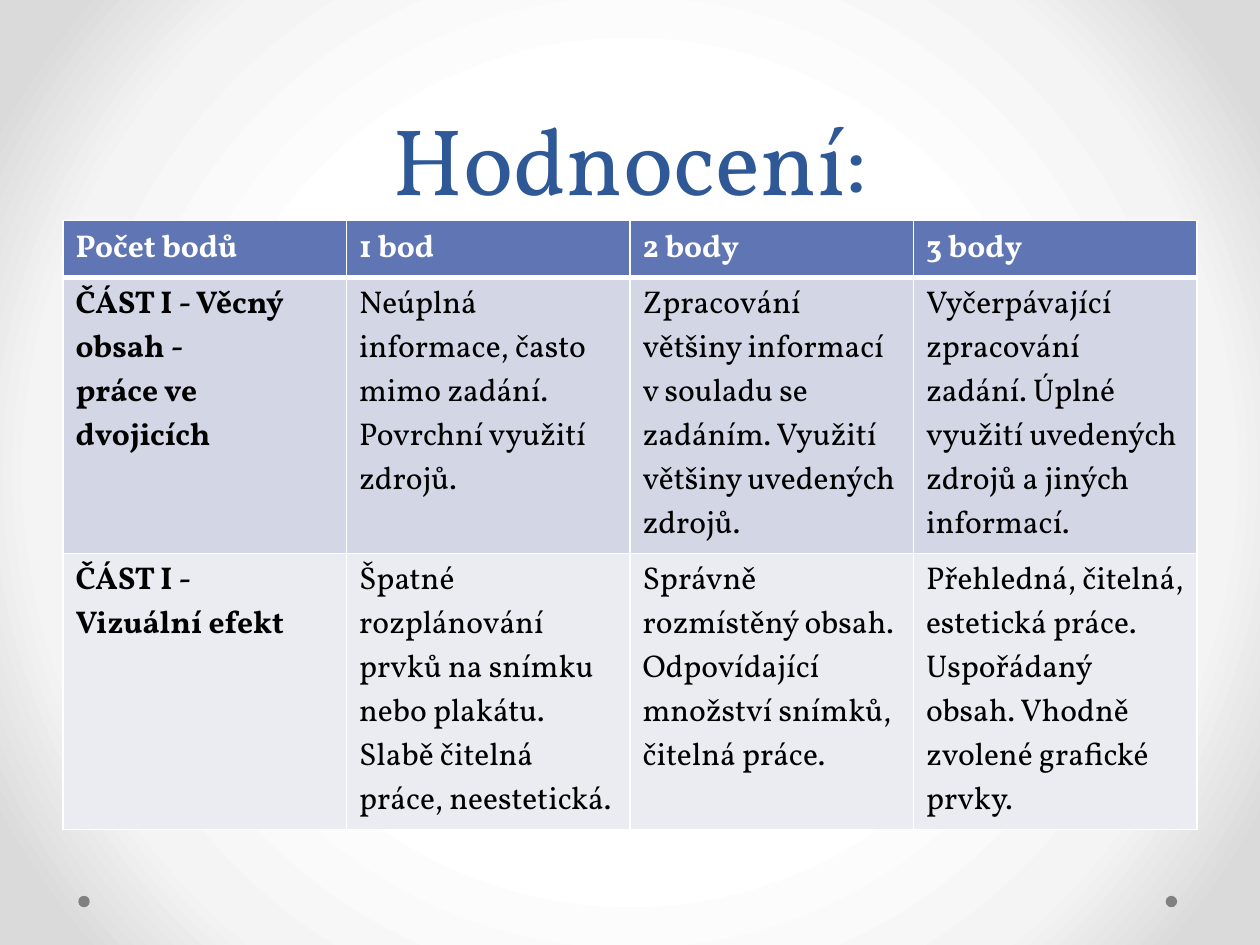
from lxml import etree
from pptx import Presentation
from pptx import util as u
from pptx.dml.color import RGBColor
from pptx.enum import shapes, text
from pptx.oxml.ns import qn

ROWS = [
    ["Počet bodů", "1 bod", "2 body", "3 body"],
    ["ČÁST I - Věcný obsah -\npráce ve dvojicích",
     "Neúplná informace, často mimo zadání. Povrchní využití zdrojů.",
     "Zpracování většiny informací v souladu se zadáním. "
     "Využití většiny uvedených zdrojů.",
     "Vyčerpávající zpracování zadání. "
     "Úplné využití uvedených zdrojů a jiných informací."],
    ["ČÁST I -\nVizuální efekt",
     "Špatné rozplánování prvků na snímku nebo plakátu. "
     "Slabě čitelná práce, neestetická.",
     "Správně rozmístěný obsah. Odpovídající množství snímků, čitelná práce.",
     "Přehledná, čitelná, estetická práce. Uspořádaný obsah. "
     "Vhodně zvolené grafické prvky."],
]
ROW_FILLS = ["6076B4", "D2D6E5", "EAECF2"]


def rgb(value):
    return RGBColor.from_string(value)


def add_xml(parent, tag, **attrs):
    return etree.SubElement(parent, qn(tag), attrs)


class Deck:
    font = "Vollkorn"
    title_color = "2F5897"
    white = "FFFFFF"
    black = "000000"
    dot_color = "808080"

    def __init__(self, width, height):
        self.prs = Presentation()
        self.prs.slide_width, self.prs.slide_height = width, height
        self.s = None

    def add_slide(self):
        self.s = self.prs.slides.add_slide(self.prs.slide_layouts[5])

    def background(self, stops):
        """Fill the slide with a gradient that spreads from its centre."""
        fill = self.s.background.fill
        fill.gradient()
        grad = self.s.background._cSld.find(".//" + qn("a:gradFill"))
        for child in list(grad):
            grad.remove(child)
        gs_list = add_xml(grad, "a:gsLst")
        for percent, color in stops:
            gs = add_xml(gs_list, "a:gs", pos=str(percent * 1000))
            add_xml(gs, "a:srgbClr", val=color)
        circle = add_xml(grad, "a:path", path="circle")
        add_xml(circle, "a:fillToRect", l="50000", t="50000", r="50000", b="50000")

    def style(self, tf, size, color, bold=False):
        for p in tf.paragraphs:
            for r in p.runs:
                r.font.name, r.font.size = self.font, u.Pt(size)
                r.font.bold, r.font.color.rgb = bold, rgb(color)

    def title(self, wording, left, top, width, height):
        sp = self.s.shapes.title
        sp.left, sp.top, sp.width, sp.height = left, top, width, height
        tf = sp.text_frame
        tf.text = wording
        tf.vertical_anchor = text.MSO_ANCHOR.BOTTOM
        tf.paragraphs[0].alignment = text.PP_ALIGN.CENTER
        tf.paragraphs[0].line_spacing = u.Pt(58)
        self.style(tf, 54, self.title_color)

    def dot(self, left, top, size):
        sp = self.s.shapes.add_shape(shapes.MSO_SHAPE.OVAL, left, top, size, size)
        sp.shadow.inherit = False
        sp.fill.solid()
        sp.fill.fore_color.rgb = rgb(self.dot_color)
        sp.line.fill.background()

    def borders(self, cell, bottom):
        """Draw white cell borders, 1 pt except for the bottom one."""
        tc_pr = cell._tc.get_or_add_tcPr()
        widths = {"a:lnL": 1, "a:lnR": 1, "a:lnT": 1, "a:lnB": bottom}
        for i, (tag, width) in enumerate(widths.items()):
            ln = etree.Element(qn(tag), w=str(u.Pt(width)))
            add_xml(add_xml(ln, "a:solidFill"), "a:srgbClr", val=self.white)
            tc_pr.insert(i, ln)

    def table(self, rows, fills, left, top, width, row_height):
        """Add a table whose rows grow with their text."""
        table = self.s.shapes.add_table(
            len(rows), len(rows[0]), left, top, width, row_height * len(rows)).table
        for i, (row, fill) in enumerate(zip(rows, fills)):
            table.rows[i].height = row_height
            header = i == 0
            for j, wording in enumerate(row):
                cell = table.cell(i, j)
                cell.text_frame.text = wording
                self.style(cell.text_frame, 18,
                           self.white if header else self.black,
                           bold=header or j == 0)
                cell.fill.solid()
                cell.fill.fore_color.rgb = rgb(fill)
                self.borders(cell, bottom=3 if header else 1)


def main():
    deck = Deck(u.Cm(25.4), u.Cm(19.05))
    deck.add_slide()
    deck.background([(50, "FFFFFF"), (76, "F4F4F4"), (92, "DADADA")])
    for left in (23.5, 1.58):
        deck.dot(u.Cm(left), u.Cm(18.06), u.Cm(0.23))
    deck.title("Hodnocení:", u.Cm(1.27), u.Cm(0), u.Cm(22.86), u.Cm(4.45))
    deck.table(ROWS, ROW_FILLS, u.Cm(1.27), u.Cm(4.45), u.Cm(22.86), u.Cm(1.04))
    deck.prs.save("out.pptx")


if __name__ == "__main__":
    main()
